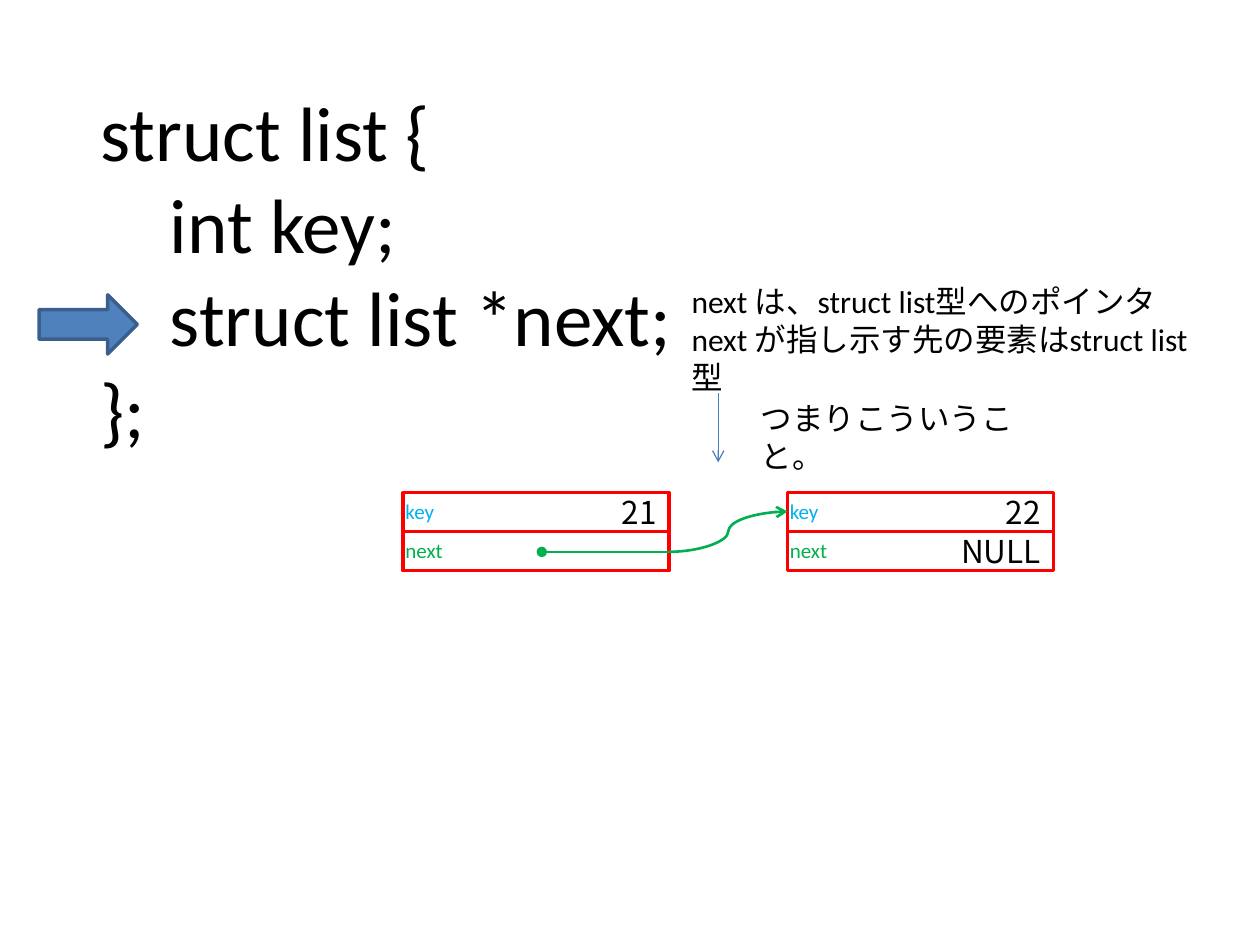
from dataclasses import dataclass
from typing import Optional

from lxml.etree import SubElement
from pptx import Presentation
from pptx.dml.color import RGBColor
from pptx.enum.shapes import MSO_CONNECTOR, MSO_SHAPE
from pptx.enum.text import MSO_ANCHOR, MSO_AUTO_SIZE, PP_ALIGN
from pptx.oxml.ns import qn
from pptx.util import Inches, Pt


@dataclass(frozen=True)
class Theme:
    latin: str = "Calibri"
    japanese: str = "Noto Sans CJK JP"
    ink: str = "000000"
    key: str = "00B0F0"
    next: str = "00B050"
    node: str = "FF0000"
    marker: str = "4F81BD"
    marker_edge: str = "3A5F8C"
    guide: str = "4B7EBC"
    code_size: float = 44
    body_size: float = 18
    label_size: float = 12


@dataclass(frozen=True)
class Node:
    left: float
    key: str
    next: str


@dataclass(frozen=True)
class Note:
    left: float
    top: float
    width: float
    height: float
    lines: tuple


@dataclass(frozen=True)
class Link:
    kind: MSO_CONNECTOR
    start: tuple
    end: tuple
    color: str
    weight: float
    head: Optional[str] = None
    tail: Optional[str] = None


THEME = Theme()
NODE_TOP, NODE_WIDTH, ROW_HEIGHT = 3.91, 2.11, 0.31
CODE_INDENT = 0.55

CODE = ("struct list {", "int key;", "struct list *next;", "};")
NODES = (Node(3.2, "21", ""), Node(6.25, "22", "NULL"))
NOTES = (
    Note(5.39, 2.19, 4.36, 0.71,
         ("next は、struct list型へのポインタ",
          "next が指し示す先の要素はstruct list型")),
    Note(5.94, 3.12, 2.21, 0.4, ("つまりこういうこと。",)),
)
LINKS = (
    Link(MSO_CONNECTOR.STRAIGHT, (4.3, 4.38), (5.31, 4.38), THEME.next, 1.5, head="oval"),
    Link(MSO_CONNECTOR.CURVE, (5.31, 4.38), (6.25, 4.06), THEME.next, 1.5, tail="arrow"),
    Link(MSO_CONNECTOR.STRAIGHT, (5.7, 3.12), (5.7, 3.67), THEME.guide, 0.75, tail="arrow"),
)


def write(frame, *lines: str, size: float = THEME.body_size, color: str = THEME.ink,
          font: str = THEME.latin, align=PP_ALIGN.LEFT, indents: tuple = ()) -> None:
    """Fill a text frame with one paragraph per line."""
    frame.word_wrap = True
    for index, line in enumerate(lines):
        para = frame.paragraphs[0] if index == 0 else frame.add_paragraph()
        para.alignment = align
        if index in indents:
            para._p.get_or_add_pPr().set("marL", str(Inches(CODE_INDENT)))
        span = para.add_run()
        span.text = line
        span.font.size = Pt(size)
        span.font.name = font
        span.font.color.rgb = RGBColor.from_string(color)
        SubElement(span._r.get_or_add_rPr(), qn("a:ea"), typeface=THEME.japanese)


def add_text(slide, left: float, top: float, width: float, height: float,
             *lines: str, **style) -> None:
    box = slide.shapes.add_textbox(Inches(left), Inches(top), Inches(width), Inches(height))
    write(box.text_frame, *lines, **style)
    box.text_frame.auto_size = MSO_AUTO_SIZE.SHAPE_TO_FIT_TEXT


def add_block(slide, kind, left: float, top: float, width: float, height: float,
              edge: str, fill: Optional[str] = None):
    block = slide.shapes.add_shape(kind, Inches(left), Inches(top), Inches(width), Inches(height))
    block.shadow.inherit = False
    if fill:
        block.fill.solid()
        block.fill.fore_color.rgb = RGBColor.from_string(fill)
    else:
        block.fill.background()
    block.line.color.rgb = RGBColor.from_string(edge)
    block.line.width = Pt(2)
    return block


def add_node(slide, node: Node) -> None:
    rows = (("key", node.key, THEME.key), ("next", node.next, THEME.next))
    for index, (label, value, color) in enumerate(rows):
        top = NODE_TOP + index * ROW_HEIGHT
        cell = add_block(slide, MSO_SHAPE.RECTANGLE, node.left, top,
                         NODE_WIDTH, ROW_HEIGHT, THEME.node)
        if value:
            cell.text_frame.vertical_anchor = MSO_ANCHOR.MIDDLE
            write(cell.text_frame, value, font=THEME.japanese, align=PP_ALIGN.RIGHT)
        add_text(slide, node.left - 0.08, top, 0.63, 0.3, label,
                 size=THEME.label_size, color=color)


def add_link(slide, link: Link) -> None:
    points = [Inches(value) for value in (*link.start, *link.end)]
    connector = slide.shapes.add_connector(link.kind, *points)
    connector.line.color.rgb = RGBColor.from_string(link.color)
    connector.line.width = Pt(link.weight)
    outline = connector.line._get_or_add_ln()
    for tag, shape in (("a:headEnd", link.head), ("a:tailEnd", link.tail)):
        if shape:
            SubElement(outline, qn(tag), type=shape)
    SubElement(connector._element.spPr, qn("a:effectLst"))


def main() -> None:
    deck = Presentation()
    deck.slide_width, deck.slide_height = Inches(10), Inches(7.5)
    slide = deck.slides.add_slide(deck.slide_layouts[6])

    # Structure declaration
    add_text(slide, 0.7, 0.62, 5, 3.06, *CODE, size=THEME.code_size, indents=(1, 2))

    # List nodes
    for node in NODES:
        add_node(slide, node)

    # Marker for the pointer member
    add_block(slide, MSO_SHAPE.RIGHT_ARROW, 0.31, 2.34, 0.78, 0.47,
              THEME.marker_edge, THEME.marker)

    # Pointer links and explanations
    for link in LINKS:
        add_link(slide, link)
    for note in NOTES:
        add_text(slide, note.left, note.top, note.width, note.height, *note.lines)

    deck.save("out.pptx")


if __name__ == "__main__":
    main()
